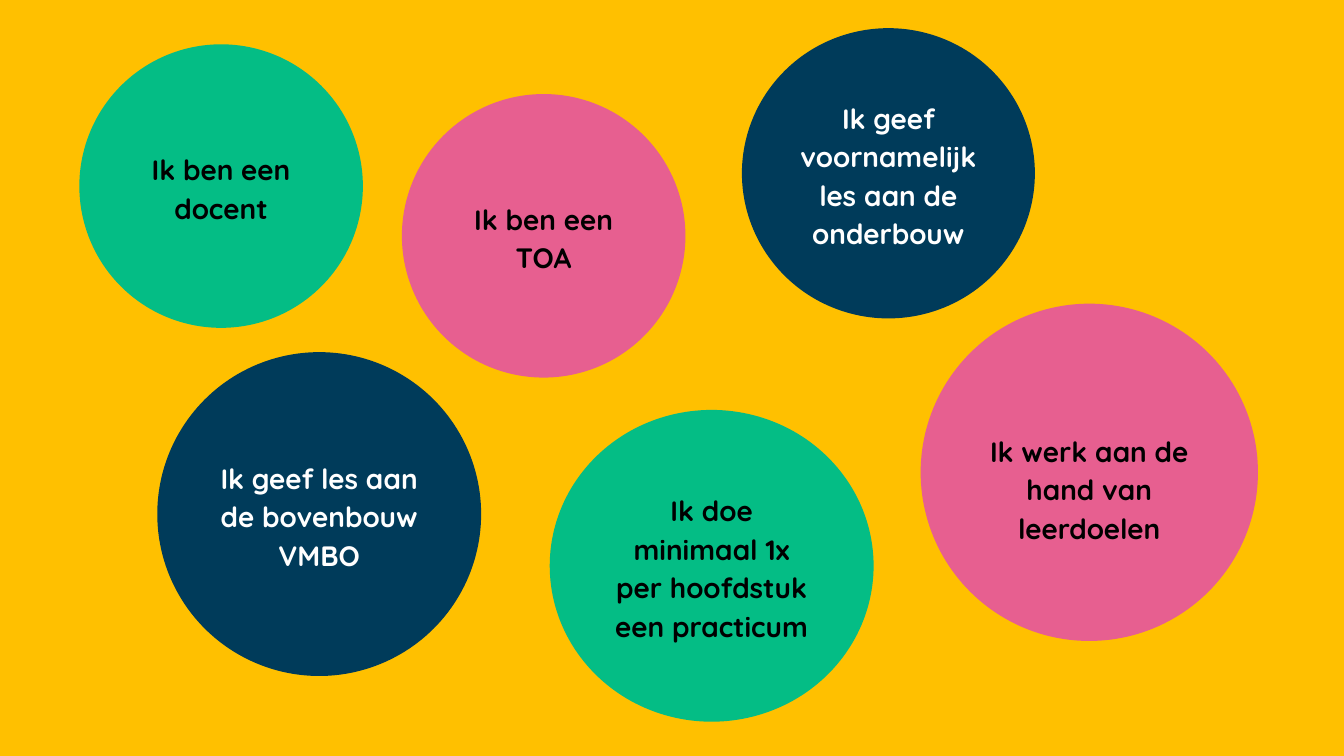
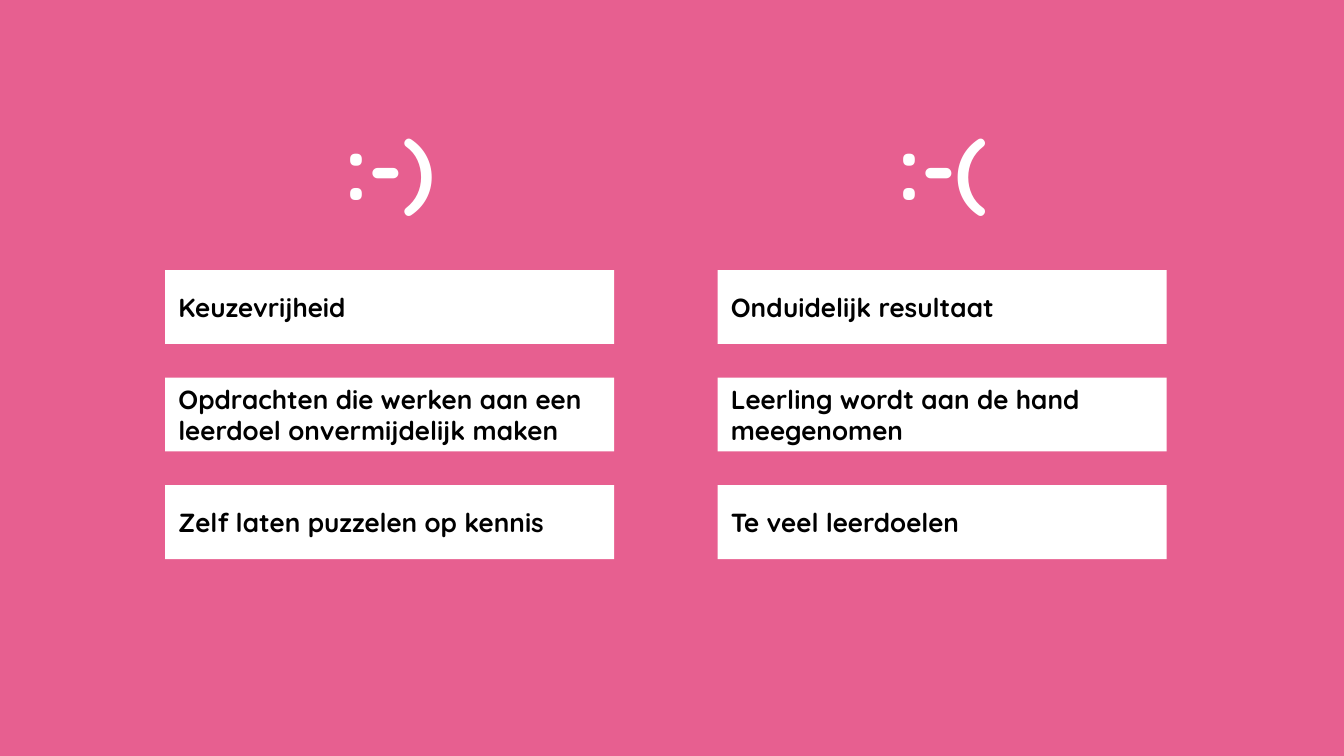
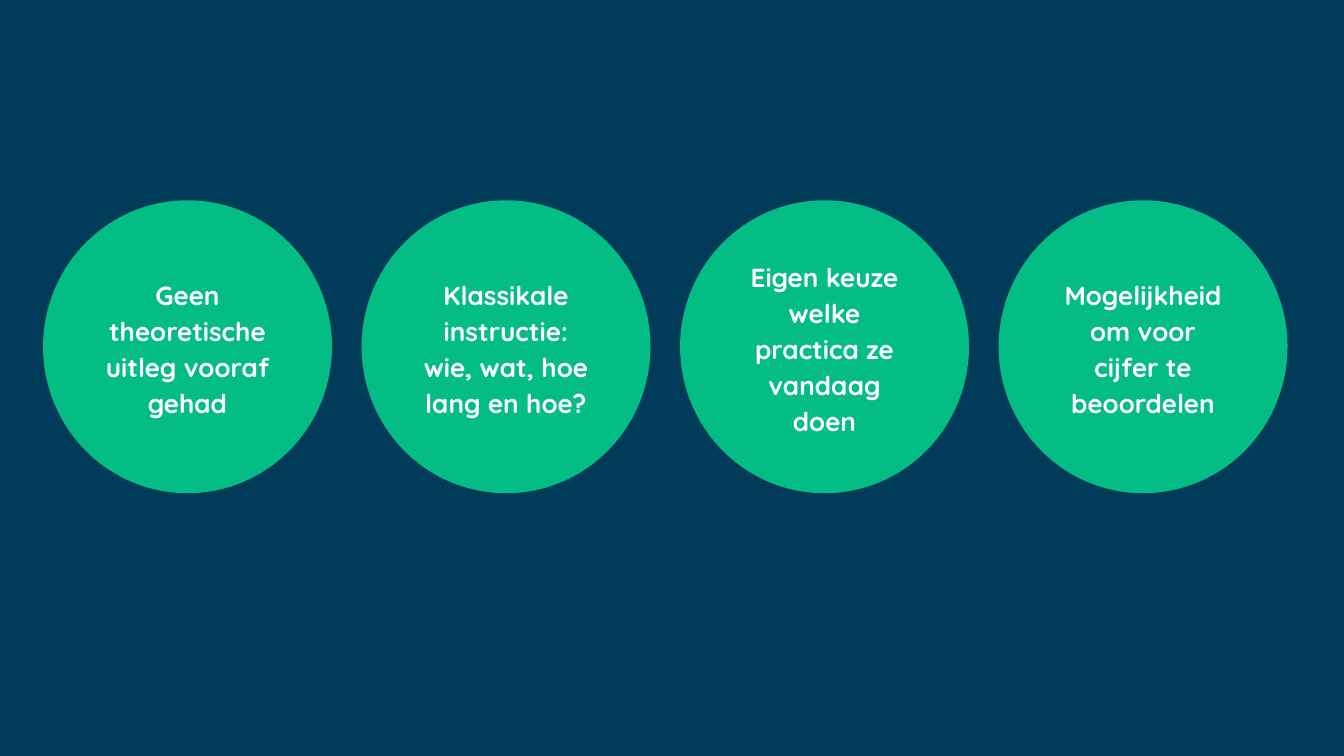
from pptx import Presentation
from pptx.dml.color import RGBColor
from pptx.enum import shapes, text
from pptx.util import Inches, Pt

YELLOW, PINK, NAVY, GREEN = "FFC000", "E75F90", "003B5A", "04BD85"
WHITE, BLACK = "FFFFFF", "000000"
FONT = "Quicksand"
BLANK_LAYOUT = 6
OVAL, BOX = shapes.MSO_SHAPE.OVAL, shapes.MSO_SHAPE.RECTANGLE
CENTER, LEFT = text.PP_ALIGN.CENTER, text.PP_ALIGN.LEFT
MIDDLE, TOP = text.MSO_ANCHOR.MIDDLE, text.MSO_ANCHOR.TOP

# left, top, width, height, fill, text colour, wording
STATEMENTS = [
    (5.52, 0.21, 2.18, 2.16, NAVY, WHITE, "Ik geef voornamelijk les aan de onderbouw"),
    (6.85, 2.26, 2.51, 2.51, PINK, BLACK, "Ik werk aan de hand van leerdoelen"),
    (0.59, 0.33, 2.11, 2.11, GREEN, BLACK, "Ik ben een docent"),
    (1.17, 2.62, 2.41, 2.41, NAVY, WHITE, "Ik geef les aan de bovenbouw VMBO"),
    (2.99, 0.7, 2.11, 2.11, PINK, BLACK, "Ik ben een TOA"),
    (4.09, 3.05, 2.41, 2.32, GREEN, BLACK,
     "Ik doe minimaal 1x per hoofdstuk een practicum"),
]
LEARNING_GOALS = 1
OPINIONS = {
    ":-)": ["Keuzevrijheid",
            "Opdrachten die werken aan een leerdoel onvermijdelijk maken",
            "Zelf laten puzzelen op kennis"],
    ":-(": ["Onduidelijk resultaat",
            "Leerling wordt aan de hand meegenomen",
            "Te veel leerdoelen"],
}
LESSON_TRAITS = [
    "Geen theoretische uitleg vooraf gehad",
    "Klassikale instructie:\nwie, wat, hoe lang en hoe?",
    "Eigen keuze welke practica ze vandaag doen",
    "Mogelijkheid om voor cijfer te beoordelen",
]


def rgb(value):
    return RGBColor.from_string(value)


def add_slide(prs, background):
    slide = prs.slides.add_slide(prs.slide_layouts[BLANK_LAYOUT])
    slide.background.fill.solid()
    slide.background.fill.fore_color.rgb = rgb(background)
    return slide


def write(frame, wording, size, color, inset=0.1, anchor=MIDDLE,
          align=CENTER, line_spacing=None):
    frame.text = wording
    margin = Inches(inset)
    layout = {"word_wrap": True, "vertical_anchor": anchor,
              "margin_left": margin, "margin_top": margin,
              "margin_right": margin, "margin_bottom": margin}
    for name, value in layout.items():
        setattr(frame, name, value)
    for paragraph in frame.paragraphs:
        paragraph.alignment = align
        paragraph.line_spacing = line_spacing
        for run in paragraph.runs:
            for name, value in {"name": FONT, "size": Pt(size), "bold": True}.items():
                setattr(run.font, name, value)
            run.font.color.rgb = rgb(color)


def add_filled(slide, kind, bounds, fill):
    shape = slide.shapes.add_shape(kind, *map(Inches, bounds))
    shape.shadow.inherit = False
    shape.fill.solid()
    shape.fill.fore_color.rgb = rgb(fill)
    shape.line.fill.background()
    return shape


def add_circle(slide, bounds, fill, wording, size, color, inset=0.1):
    circle = add_filled(slide, OVAL, bounds, fill)
    write(circle.text_frame, wording, size, color, inset, line_spacing=1.15)
    return circle


def add_opinion(slide, bounds, wording):
    box = add_filled(slide, BOX, bounds, WHITE)
    write(box.text_frame, wording, 14, BLACK, align=LEFT)


def add_emoticon(slide, bounds, wording):
    emoticon = slide.shapes.add_textbox(*map(Inches, bounds))
    write(emoticon.text_frame, wording, 47, WHITE, inset=0.07, anchor=TOP)
    emoticon.text_frame.auto_size = text.MSO_AUTO_SIZE.SHAPE_TO_FIT_TEXT


def build_statements(prs):
    slide = add_slide(prs, YELLOW)
    circles = [add_circle(slide, bounds, fill, wording, 15, color)
               for *bounds, fill, color, wording in STATEMENTS]
    # This wording sits a little below the middle of its circle.
    circles[LEARNING_GOALS].text_frame.margin_top = Inches(0.32)


def build_opinions(prs):
    slide = add_slide(prs, PINK)
    width = 3.34
    for column, (emoticon, opinions) in enumerate(OPINIONS.items()):
        left = 1.23 + 4.11 * column
        add_emoticon(slide, (left, 0.77, width, 0.94), emoticon)
        for row, opinion in enumerate(opinions):
            add_opinion(slide, (left, 2.01 + 0.8 * row, width, 0.55), opinion)


def build_lesson_traits(prs):
    slide = add_slide(prs, NAVY)
    for column, trait in enumerate(LESSON_TRAITS):
        bounds = (0.32 + 2.37 * column, 1.49, 2.15, 2.18)
        add_circle(slide, bounds, GREEN, trait, 14, WHITE, inset=0.11)


def main():
    prs = Presentation()
    prs.slide_width = Inches(10)
    prs.slide_height = prs.slide_width * 9 // 16
    build_statements(prs)
    build_opinions(prs)
    build_lesson_traits(prs)
    prs.save("out.pptx")


if __name__ == "__main__":
    main()
